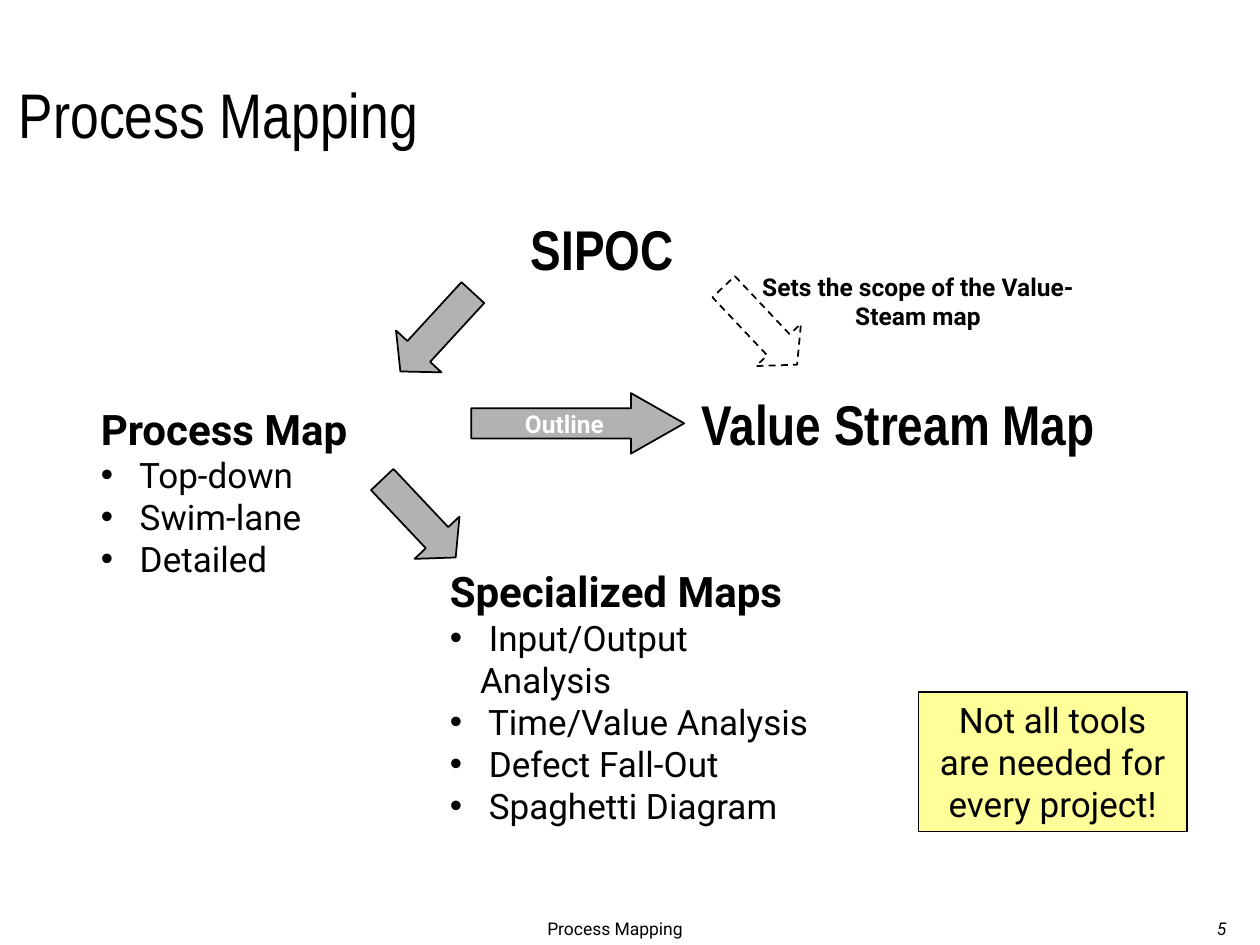
from pptx import Presentation
from pptx.dml.color import RGBColor
from pptx.enum.dml import MSO_LINE
from pptx.enum.shapes import MSO_SHAPE as Kind
from pptx.enum.text import MSO_ANCHOR as Anchor, MSO_AUTO_SIZE as Fit, PP_ALIGN as Align
from pptx.oxml.ns import qn
from pptx.util import Pt
from lxml.etree import SubElement

PX = 9144  # 100 px to the inch
BLACK = RGBColor(0x00, 0x00, 0x00)
WHITE = RGBColor(0xFF, 0xFF, 0xFF)
GRAY = RGBColor(0xB2, 0xB2, 0xB2)
YELLOW = RGBColor(0xFF, 0xFF, 0x99)
HEAD, BODY = "Arial Narrow", "Roboto"
INDENT = 24


class Board:
    """Holds the slide and the style shared by its elements."""

    def __init__(self, slide):
        self.slide = slide
        self.shapes = slide.shapes

    def place(self, shape, box):
        shape.left, shape.top, shape.width, shape.height = (n * PX for n in box)

    def style(self, para, size, name=BODY, bold=False, color=BLACK, align=Align.LEFT):
        para.alignment = align
        para.space_before = Pt(0)
        font = para.font
        font.size, font.name, font.bold = Pt(size), name, bold
        font.color.rgb = color

    def title(self, text, box):
        shape = self.shapes.title
        self.place(shape, box)
        frame = shape.text_frame
        frame.text = text
        frame.auto_size = Fit.NONE
        frame.vertical_anchor = Anchor.BOTTOM
        para = frame.paragraphs[0]
        self.style(para, 36, HEAD)
        para.line_spacing = 0.9

    def list(self, slot, head, items, box):
        """Fill a body placeholder with a bold heading and bulleted items."""
        shape = self.slide.placeholders[slot]
        self.place(shape, box)
        frame = shape.text_frame
        frame.text = "\n".join([head] + [f" {item}" for item in items])
        frame.auto_size = Fit.NONE
        first, *rest = frame.paragraphs
        self.style(first, 24, bold=True)
        self.bullet(first, 0)
        for para in rest:
            self.style(para, 20)
            self.bullet(para, INDENT, "•")

    def bullet(self, para, indent, char=None):
        props = para._p.get_or_add_pPr()
        props.set("marL", str(indent * PX))
        props.set("indent", str(-indent * PX))
        if char:
            SubElement(props, qn("a:buChar")).set("char", char)
        else:
            SubElement(props, qn("a:buNone"))

    def text(self, text, box, size, wrap=True, anchor=Anchor.TOP, align=Align.CENTER, **look):
        shape = self.shapes.add_textbox(*(n * PX for n in box))
        frame = shape.text_frame
        frame.word_wrap = wrap
        frame.vertical_anchor = anchor
        frame.text = text
        para = frame.paragraphs[0]
        self.style(para, size, align=align, **look)
        return para

    def shape(self, kind, box, fill=None):
        shape = self.shapes.add_shape(kind, *(n * PX for n in box))
        shape.shadow.inherit = False
        if fill is None:
            shape.fill.background()
        else:
            shape.fill.solid()
            shape.fill.fore_color.rgb = fill
        shape.line.color.rgb = BLACK
        shape.line.width = Pt(1)
        return shape

    def arrow(self, box, tip, turn=0, fill=GRAY):
        shape = self.shape(Kind.RIGHT_ARROW, box, fill)
        shape.adjustments[1] = tip
        shape.rotation = turn
        return shape

    def label(self, shape, text, size, wrap=True, **look):
        frame = shape.text_frame
        frame.word_wrap = wrap
        frame.text = text
        self.style(frame.paragraphs[0], size, align=Align.CENTER, **look)


def main():
    deck = Presentation()
    deck.slide_width, deck.slide_height = 1000 * PX, 750 * PX
    board = Board(deck.slides.add_slide(deck.slide_layouts[3]))

    page = board.text("5", (956, 725, 44, 25), 10, anchor=Anchor.BOTTOM, align=Align.LEFT)
    page.font.italic = True
    board.text("Process Mapping", (142, 724, 692, 26), 10)
    board.title("Process Mapping", (5, 1, 831, 125))

    for text, box in (("SIPOC", (411, 165, 134, 63)),
                      ("Value Stream Map", (546, 304, 334, 63))):
        board.text(text, box, 32, wrap=False, name=HEAD, bold=True)
    board.list(1, "Process Map", ["Top-down", "Swim-lane", "Detailed"],
               (70, 315, 229, 150))
    board.list(2, "Specialized Maps",
               ["Input/Output Analysis", "Time/Value Analysis",
                "Defect Fall-Out", "Spaghetti Diagram"],
               (347, 444, 309, 183))

    for left, top, turn, fill in ((561, 234, 46.7, None),
                                  (290, 387, 46.7, GRAY),
                                  (304, 239, 132.6, GRAY)):
        arrow = board.arrow((left, top, 85, 49), 0.44, turn, fill)
        if fill is None:
            arrow.line.dash_style = MSO_LINE.DASH
    outline = board.arrow((374, 312, 169, 48), 0.88)
    board.label(outline, "Outline", 14, wrap=False, bold=True, color=WHITE)

    board.text("Sets the scope of the Value-Steam map", (594, 211, 269, 57), 14, bold=True)
    note = board.shape(Kind.RECTANGLE, (729, 549, 213, 111), YELLOW)
    board.label(note, "Not all tools are needed for every project!", 20)

    deck.save("out.pptx")


if __name__ == "__main__":
    main()
